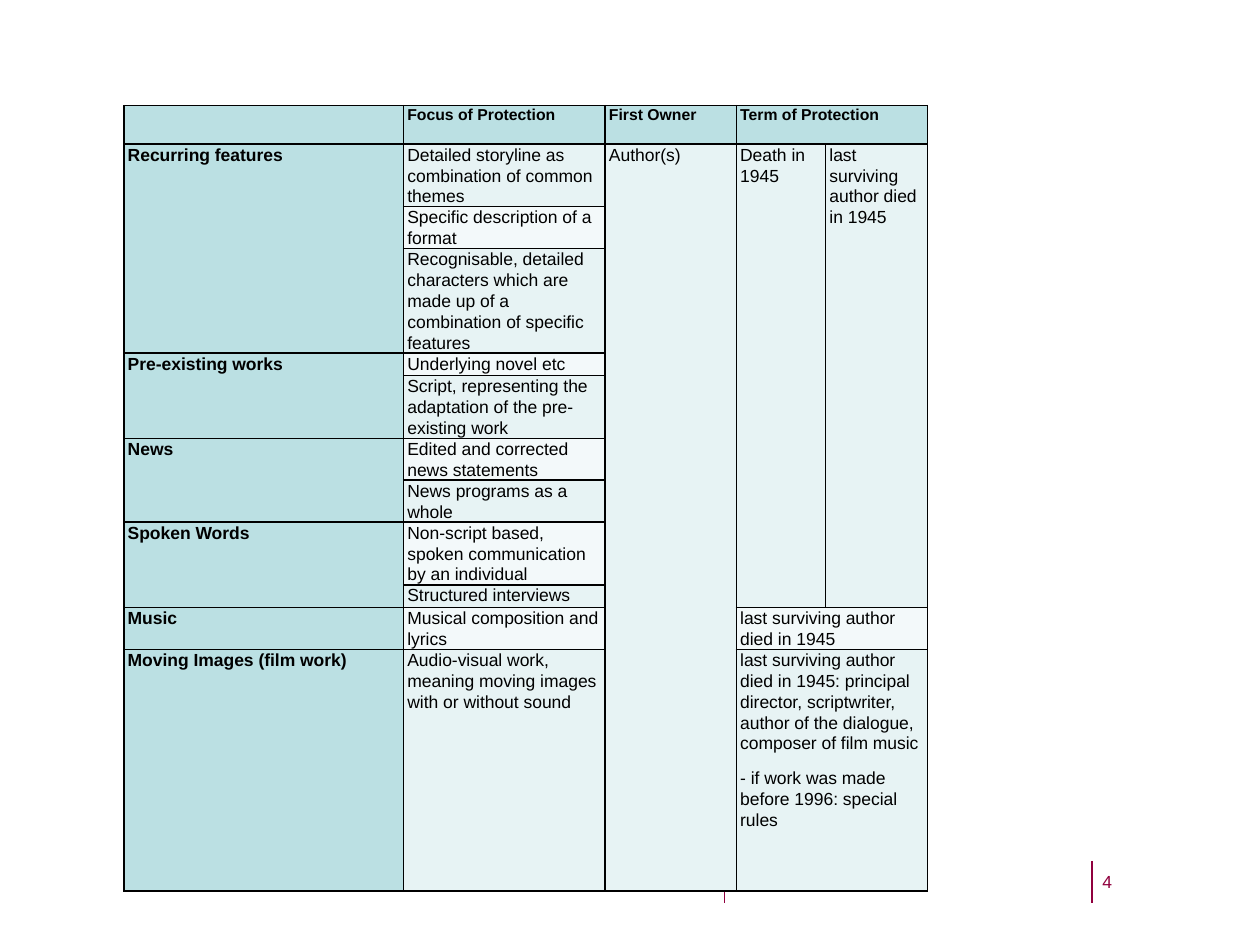
from dataclasses import dataclass

from lxml.etree import SubElement
from pptx import Presentation
from pptx.dml.color import RGBColor
from pptx.enum.shapes import MSO_CONNECTOR
from pptx.oxml.ns import qn
from pptx.util import Pt


@dataclass(frozen=True)
class Theme:
    font: str = "Arial"
    ink: str = "000000"
    accent: str = "90003E"
    heading_fill: str = "BBE0E3"
    odd_fill: str = "E7F3F4"
    even_fill: str = "F3F9FA"
    header_size: float = 9
    body_size: float = 10
    rule: float = 0.75
    border: float = 1


THEME = Theme()
COLUMNS = [159.8, 115.2, 75, 51, 58.3]
ROWS = [21.6, 25.9, 17.3, 42.5, 13, 25.9, 17.3, 17.3, 25.9, 13, 17.3, 138.2]

HEADERS = ["Focus of Protection", "First Owner", "Term of Protection"]
SECTIONS = [
    ("Recurring features", [
        "Detailed storyline as combination of common themes",
        "Specific description of a format",
        "Recognisable, detailed characters which are made up of a "
        "combination of specific features"]),
    ("Pre-existing works", [
        "Underlying novel etc",
        "Script, representing the adaptation of the pre-existing work"]),
    ("News", ["Edited and corrected news statements", "News programs as a whole"]),
    ("Spoken Words", [
        "Non-script based, spoken communication by an individual",
        "Structured interviews"]),
    ("Music", ["Musical composition and lyrics"]),
    ("Moving Images (film work)", [
        "Audio-visual work, meaning moving images with or without sound"]),
]
SURVIVING = "last surviving author died in 1945"
# row, column, row span, column span, paragraphs
OWNER_AND_TERM = [
    (1, 2, 11, 1, ["Author(s)"]),
    (1, 3, 9, 1, ["Death in 1945"]),
    (1, 4, 9, 1, [SURVIVING]),
    (10, 3, 1, 2, [SURVIVING]),
    (11, 3, 1, 2, [
        SURVIVING + ": principal director, scriptwriter, author of the "
        "dialogue, composer of film music",
        "- if work was made before 1996: special rules"]),
]


def set_all(obj, values):
    for name, value in values.items():
        setattr(obj, name, value)


def style_font(font, size, color, bold=False):
    set_all(font, {"name": THEME.font, "size": Pt(size), "bold": bold})
    font.color.rgb = RGBColor.from_string(color)


def format_cell(cell, row, col):
    """Give the cell its insets, borders and the fill of its row or heading."""
    set_all(cell, {"margin_left": Pt(2.2), "margin_right": Pt(2.2),
                   "margin_top": 0, "margin_bottom": 0})
    tc_pr = cell._tc.get_or_add_tcPr()
    for side in ("lnL", "lnR", "lnT", "lnB"):
        ln = SubElement(tc_pr, qn(f"a:{side}"), w=str(Pt(THEME.border)))
        fill = SubElement(ln, qn("a:solidFill"))
        SubElement(fill, qn("a:srgbClr"), val=THEME.ink)
    if row == 0 or col == 0:
        color = THEME.heading_fill
    else:
        color = THEME.odd_fill if row % 2 else THEME.even_fill
    cell.fill.solid()
    cell.fill.fore_color.rgb = RGBColor.from_string(color)


def fill_cell(table, row, col, rows, cols, paragraphs):
    """Merge the span that starts at row and col, and write the paragraphs."""
    cell = table.cell(row, col)
    if rows * cols > 1:
        cell.merge(table.cell(row + rows - 1, col + cols - 1))
    tf = cell.text_frame
    tf.text = "\n".join(paragraphs)
    for p in tf.paragraphs:
        set_all(p, {"line_spacing": 1.07, "space_after": Pt(8)})
        size = THEME.body_size if row else THEME.header_size
        for r in p.runs:
            style_font(r.font, size, THEME.ink, bold=row == 0 or col == 0)


def add_protection_table(slide, left, top, width, height):
    sp = slide.shapes.add_table(len(ROWS), len(COLUMNS), Pt(left), Pt(top),
                                Pt(width), Pt(height))
    table = sp.table
    set_all(table, {"first_row": False, "horz_banding": False})
    for column, column_width in zip(table.columns, COLUMNS):
        column.width = Pt(column_width)
    for row, row_height in zip(table.rows, ROWS):
        row.height = Pt(row_height)
    sp.height = Pt(height)
    for row in range(len(ROWS)):
        for col in range(len(COLUMNS)):
            format_cell(table.cell(row, col), row, col)

    for col, text in enumerate(HEADERS, start=1):
        fill_cell(table, 0, col, 1, 2 if col == len(HEADERS) else 1, [text])
    row = 1
    for title, focuses in SECTIONS:
        fill_cell(table, row, 0, len(focuses), 1, [title])
        for focus in focuses:
            fill_cell(table, row, 1, 1, 1, [focus])
            row += 1
    for entry in OWNER_AND_TERM:
        fill_cell(table, *entry)


def add_footer_rule(slide, x, top, height):
    line = slide.shapes.add_connector(MSO_CONNECTOR.STRAIGHT, Pt(x), Pt(top),
                                      Pt(x), Pt(top + height))
    line.line.color.rgb = RGBColor.from_string(THEME.accent)
    line.line.width = Pt(THEME.rule)
    SubElement(line._element.spPr, qn("a:effectLst"))


def add_page_number(slide, left, top, width, height, number):
    tf = slide.shapes.add_textbox(Pt(left), Pt(top), Pt(width), Pt(height)).text_frame
    set_all(tf, {"word_wrap": True, "margin_left": 0, "margin_right": 0,
                 "margin_top": 0, "margin_bottom": 0})
    r = tf.paragraphs[0].add_run()
    r.text = number
    style_font(r.font, THEME.body_size, THEME.accent)


def main():
    prs = Presentation()
    set_all(prs, {"slide_width": Pt(720), "slide_height": Pt(540)})
    slide = prs.slides.add_slide(prs.slide_layouts[6])
    for x in (624, 414):
        add_footer_rule(slide, x, 492, 24)
    add_protection_table(slide, 70.8, 60.3, sum(COLUMNS), 468.7)
    add_page_number(slide, 630, 498, 42, 31, "4")
    prs.save("out.pptx")


if __name__ == "__main__":
    main()
